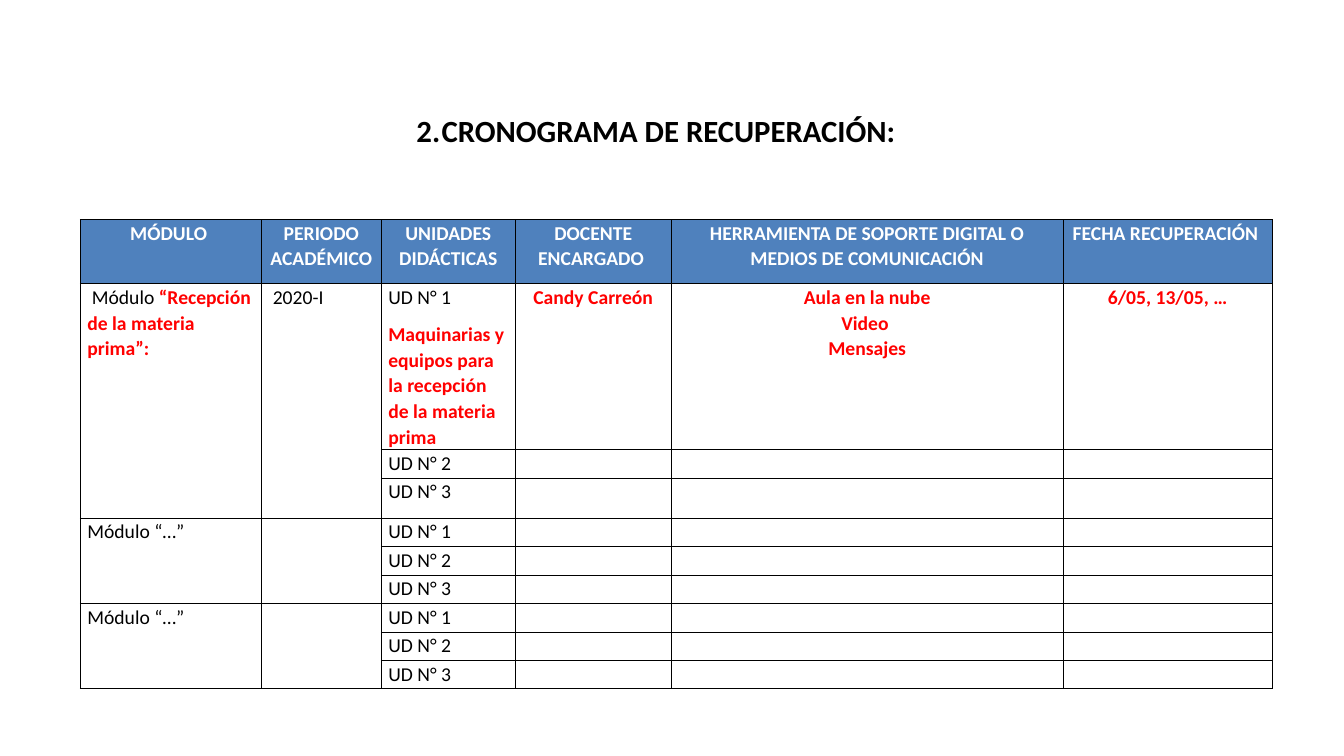
import lxml.etree
import pptx
import pptx.dml.color
import pptx.enum.text
import pptx.oxml.ns
import pptx.util

Pt = pptx.util.Pt
ALIGN = pptx.enum.text.PP_ALIGN
HUES = {"black": "000000", "white": "FFFFFF", "red": "FF0000", "blue": "4F81BD"}
WIDTHS = [129.3, 85.7, 95.7, 111.4, 280, 149.3]
HEIGHTS = [46, 117, 20.3, 28.8] + [20.3] * 6
HEADS = ["MÓDULO ", "PERIODO ACADÉMICO ", "UNIDADES DIDÁCTICAS", "DOCENTE ENCARGADO ",
         "HERRAMIENTA DE SOPORTE DIGITAL O MEDIOS DE COMUNICACIÓN", "FECHA RECUPERACIÓN "]
MODULES = [
    [(" Módulo ", "black"), ("“Recepción de la materia prima”:", "red")],
    [("Módulo “…”", "black")],
    [("Módulo “…”", "black")],
]
TOPIC = "Maquinarias y equipos para la recepción de la materia prima"
TOOLS = ["Aula en la nube", "Video ", "Mensajes"]


def color(name):
    """Return the named hue as a colour value."""
    return pptx.dml.color.RGBColor.from_string(HUES[name])


def node(parent, tag, **attrs):
    """Append a drawing element to its parent."""
    return lxml.etree.SubElement(parent, pptx.oxml.ns.qn(tag), attrs)


def style(font, size, hue, bold):
    """Format one run."""
    font.name, font.size, font.bold = "Calibri", Pt(size), bold
    font.color.rgb = color(hue)


def write(cell, lines, align=ALIGN.LEFT, gap=0):
    """Fill a cell with paragraphs of (text, hue) runs."""
    frame = cell.text_frame
    for index, runs in enumerate(lines):
        para = frame.add_paragraph() if index else frame.paragraphs[0]
        para.alignment, para.line_spacing = align, 1.08
        if index and gap:
            para.space_before = Pt(gap)
        for text, hue in runs:
            run = para.add_run()
            run.text = text
            style(run.font, 14, hue, hue != "black")


def frame_cell(cell, hue=None):
    """Set the margins, borders and fill of a cell."""
    cell.margin_left = cell.margin_right = Pt(5)
    cell.margin_top = cell.margin_bottom = 0
    props = cell._tc.get_or_add_tcPr()
    for side in ("a:lnL", "a:lnR", "a:lnT", "a:lnB"):
        line = node(props, side, w=str(Pt(0.75)))
        node(node(line, "a:solidFill"), "a:srgbClr", val=HUES["black"])
    if hue:
        cell.fill.solid()
        cell.fill.fore_color.rgb = color(hue)
    else:
        cell.fill.background()
    node(cell.text_frame.paragraphs[0]._p, "a:endParaRPr", sz="1400")


def add_title(slide):
    """Place the numbered heading."""
    title = slide.shapes.title
    title.left, title.top, title.width, title.height = Pt(96.5), Pt(70.5), Pt(744), Pt(44.6)
    frame = title.text_frame
    frame.text = "CRONOGRAMA DE RECUPERACIÓN:"
    frame.word_wrap = True
    frame.auto_size = pptx.enum.text.MSO_AUTO_SIZE.NONE
    frame.vertical_anchor = pptx.enum.text.MSO_ANCHOR.TOP
    frame.margin_left = frame.margin_right = frame.margin_top = frame.margin_bottom = Pt(7.2)
    para = frame.paragraphs[0]
    para.alignment, para.line_spacing = ALIGN.CENTER, 1.08
    props = para._p.get_or_add_pPr()
    props.set("marL", str(Pt(18)))
    props.set("indent", str(-Pt(18)))
    node(node(props, "a:buClr"), "a:srgbClr", val=HUES["black"])
    node(props, "a:buFont", typeface="+mj-lt")
    node(props, "a:buAutoNum", type="arabicPeriod", startAt="2")
    style(para.runs[0].font, 22, "black", True)


def add_plan(slide):
    """Build the recovery schedule table."""
    shape = slide.shapes.add_table(len(HEIGHTS), len(WIDTHS), Pt(57.4), Pt(156.8),
                                   Pt(sum(WIDTHS)), Pt(sum(HEIGHTS)))
    table = shape.table
    table.horz_banding = table.first_row = False
    for column, width in zip(table.columns, WIDTHS):
        column.width = Pt(width)
    for row, height in zip(table.rows, HEIGHTS):
        row.height = Pt(height)
    for col, head in enumerate(HEADS):
        write(table.cell(0, col), [[(head, "white")]], ALIGN.CENTER)
    for index, module in enumerate(MODULES):
        top = 1 + 3 * index
        for col in (0, 1):
            table.cell(top, col).merge(table.cell(top + 2, col))
        write(table.cell(top, 0), [module])
        for unit in range(3):
            lines = [[(f"UD N° {unit + 1}", "black")]]
            if index == unit == 0:
                lines.append([(TOPIC, "red")])
            write(table.cell(top + unit, 2), lines, gap=8)
    write(table.cell(1, 1), [[(" 2020-I", "black")]])
    for col, lines in ((3, ["Candy Carreón"]), (4, TOOLS), (5, ["6/05, 13/05, …"])):
        write(table.cell(1, col), [[(line, "red")] for line in lines], ALIGN.CENTER)
    for row in range(len(HEIGHTS)):
        for col in range(len(WIDTHS)):
            frame_cell(table.cell(row, col), None if row else "blue")


def main():
    """Make the slide and save it."""
    deck = pptx.Presentation()
    deck.slide_width, deck.slide_height = Pt(960), Pt(540)
    slide = deck.slides.add_slide(deck.slide_layouts[5])
    add_title(slide)
    add_plan(slide)
    deck.save("out.pptx")


if __name__ == "__main__":
    main()
